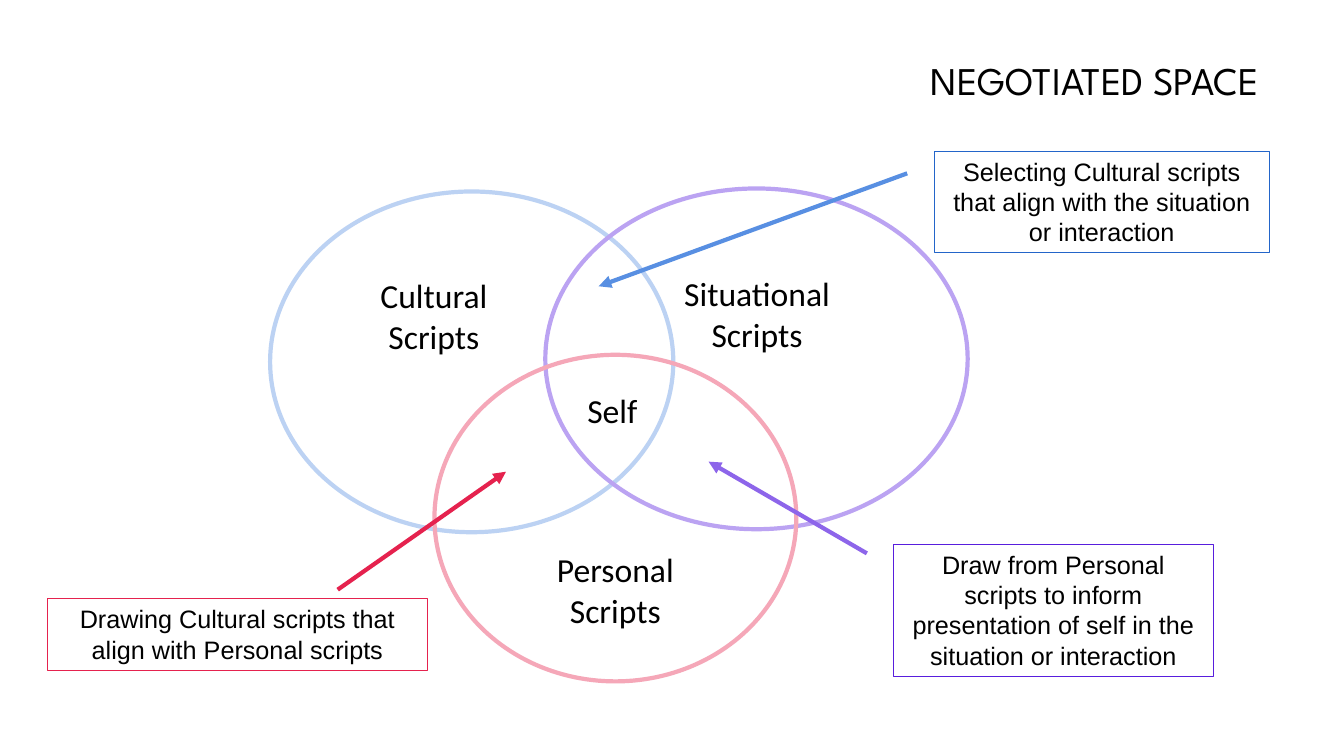
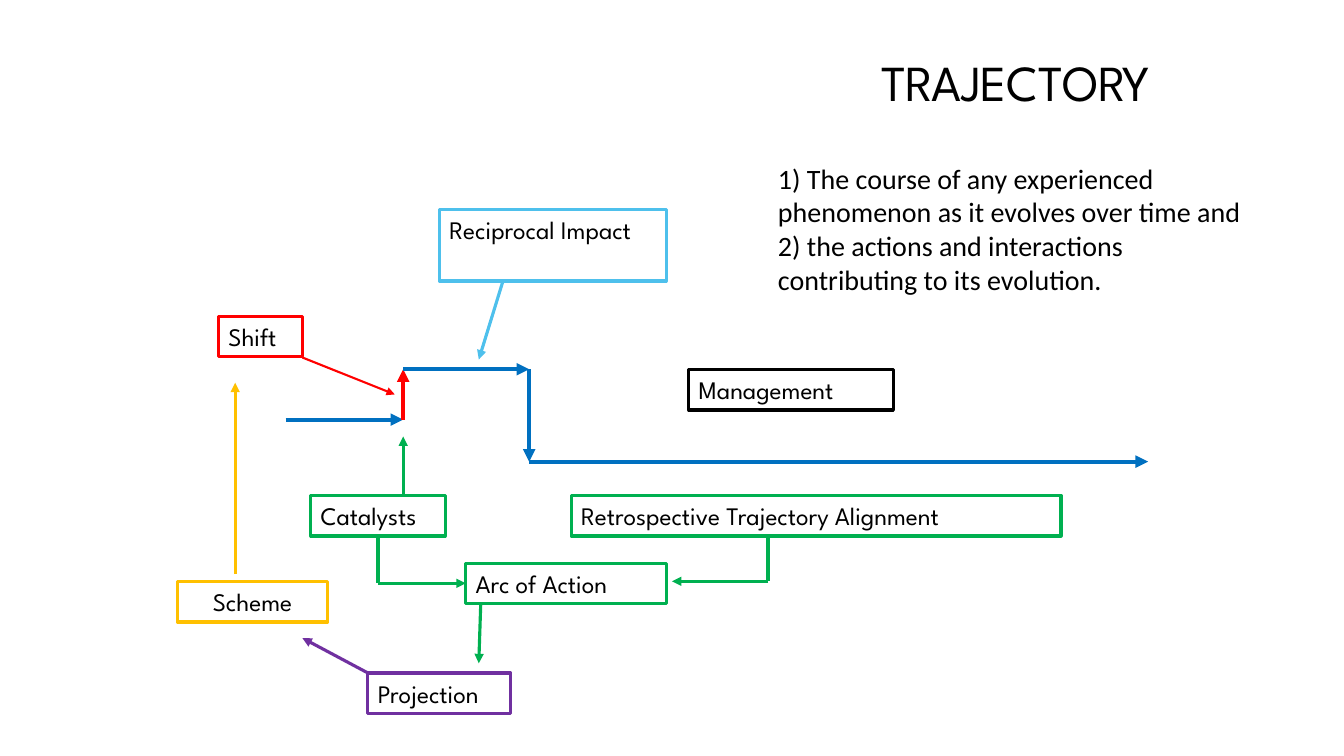
from itertools import pairwise
from pptx import Presentation
from pptx.dml.color import RGBColor
from pptx.enum.shapes import MSO_CONNECTOR as Connector, MSO_SHAPE as Shape
from pptx.enum.text import MSO_ANCHOR as Anchor, PP_ALIGN as Align
from pptx.oxml.xmlchemy import OxmlElement
from pptx.util import Inches, Pt

# Slide grid: 160 columns by 90 rows, twelve to the inch
COLUMNS, ROWS = 160, 90
CELL = Inches(1) / 12

HEADING_FONT, LABEL_FONT, CALLOUT_FONT = "League Spartan", "Calibri", "Arial"
BLACK, BLUE, RED, GREEN = "000000", "0070C0", "FF0000", "00B050"
SKY, AMBER, PURPLE = "4EC0EC", "FFC000", "7030A0"
CRIMSON, VIOLET, AZURE = "E5224E", "8D65EA", "588FE2"


def color(value):
    return RGBColor.from_string(value)


def cells(*counts):
    return [round(count * CELL) for count in counts]


def shifted(origin, left, top, *size):
    return (origin[0] + left, origin[1] + top, *size)


def write(shape, text, font=LABEL_FONT, size=24, align=Align.CENTER,
          anchor=Anchor.TOP, spacing=1.0):
    frame = shape.text_frame
    frame.word_wrap = True
    frame.vertical_anchor = anchor
    paragraph = frame.paragraphs[0]
    paragraph.alignment = align
    paragraph.line_spacing = spacing
    run = paragraph.add_run()
    run.text = text
    run.font.name = font
    run.font.size = Pt(size)
    run.font.color.rgb = color(BLACK)


def add_text(slide, box, text, **style):
    write(slide.shapes.add_textbox(*cells(*box)), text, **style)


def add_outline(slide, kind, box, line, width):
    shape = slide.shapes.add_shape(kind, *cells(*box))
    shape.shadow.inherit = False
    shape.fill.background()
    shape.line.color.rgb = color(line)
    shape.line.width = Pt(width)
    return shape


def add_line(slide, start, end, line, width, arrow=True):
    connector = slide.shapes.add_connector(
        Connector.STRAIGHT, *cells(*start), *cells(*end))
    connector.line.color.rgb = color(line)
    connector.line.width = Pt(width)
    if arrow:
        head = OxmlElement("a:tailEnd")
        head.set("type", "triangle")
        connector.line._get_or_add_ln().append(head)
    connector._element.spPr.append(OxmlElement("a:effectLst"))


def add_route(slide, origin, points, line, width):
    """Joined lines with an arrowhead on the last one."""
    legs = list(pairwise(shifted(origin, *point) for point in points))
    for number, (start, end) in enumerate(legs, 1):
        add_line(slide, start, end, line, width, arrow=number == len(legs))


def add_title(slide, box, text, size):
    add_text(slide, box, text, font=HEADING_FONT, size=size,
             align=Align.RIGHT, anchor=Anchor.MIDDLE, spacing=0.9)


def add_venn(slide, origin):
    circles = [
        ((0, 0.36, 48, 40.56), "BCD2F3"),
        ((32.76, 0, 50.28, 40.56), "BBA3F2"),
        ((19.56, 19.8, 43.08, 38.88), "F5A7B8"),
    ]
    for box, line in circles:
        add_outline(slide, Shape.OVAL, shifted(origin, *box), line, 3)
    labels = [
        ("Cultural Scripts", (7.08, 9.72, 24.84, 10.92)),
        ("Situational Scripts", (44.88, 9.48, 26.16, 10.92)),
        ("Personal Scripts", (28.08, 42.36, 26.04, 10.92)),
        ("Self", (35.04, 23.4, 11.4, 6)),
    ]
    for text, box in labels:
        add_text(slide, shifted(origin, *box), text)


def add_callout(slide, box, text, border, arrow_color, start, end):
    """Bordered note; its arrow is given relative to the note's corner."""
    add_line(slide, shifted(box, *start), shifted(box, *end), arrow_color, 3)
    note = add_outline(slide, Shape.RECTANGLE, box, border, 0.75)
    write(note, text, font=CALLOUT_FONT, size=18)


def add_trajectory(slide, origin):
    # Stepped course of the trajectory
    steps = [(13, 25), (27, 25), (27, 19), (42, 19), (42, 30), (115.68, 30)]
    for start, end in pairwise(steps):
        is_shift = start[0] == end[0] and end[1] < start[1]
        add_route(slide, origin, [start, end], RED if is_shift else BLUE, 3)

    # Concept boxes: text, left, top, width, height, colour
    row = 4.85
    concepts = [
        ("Catalysts", 16, 34, 16, row, GREEN),
        ("Shift", 5, 12.68, 10, row, RED),
        ("Projection", 22.8, 55.16, 17, row, PURPLE),
        ("Arc of Action", 34.44, 42.08, 23.88, row, GREEN),
        ("Reciprocal Impact", 31.32, 0, 27, 8.5, SKY),
        ("Scheme", 0.12, 44.24, 17.88, row, AMBER),
        ("Management", 61, 19, 24.36, row, BLACK),
        ("Retrospective Trajectory Alignment", 47, 34, 58.32, row, GREEN),
    ]
    for text, *box, line in concepts:
        shape = add_outline(slide, Shape.RECTANGLE, shifted(origin, *box),
                            line, 2.25)
        write(shape, text, font=HEADING_FONT, size=18,
              align=Align.CENTER if text == "Scheme" else Align.LEFT)

    # Links between the concepts and the course
    links = [
        ([(27, 34), (27, 27)], GREEN, 2.25),
        ([(15, 17.6), (26, 22)], RED, 1.5),
        ([(36.24, 46.76), (36, 54)], GREEN, 2.25),
        ([(24, 38.84), (24, 44.48), (34.44, 44.48)], GREEN, 2.25),
        ([(38.88, 8.5), (36, 17.84)], SKY, 2.25),
        ([(22.8, 55.16), (15, 51)], PURPLE, 2.25),
        ([(7, 43.4), (7, 20.6)], AMBER, 2.25),
        ([(70.44, 38.84), (70.44, 44.24), (59, 44.24)], GREEN, 2.25),
    ]
    for points, line, width in links:
        add_route(slide, origin, points, line, width)


def build_negotiated_space(slide):
    add_title(slide, (97.68, 3.6, 53.4, 12.6), "NEGOTIATED SPACE", 28)
    add_venn(slide, (32.16, 22.44))
    add_callout(slide, (5.64, 71.28, 45.24, 8.52),
                "Drawing Cultural scripts that align with Personal scripts",
                CRIMSON, CRIMSON, (34.56, -1.08), (54.6, -15.12))
    add_callout(slide, (106.32, 64.8, 38.16, 15.72),
                "Draw from Personal scripts to inform presentation of self "
                "in the situation or interaction",
                "581EDD", VIOLET, (-3.12, 1.08), (-21.96, -9.84))
    add_callout(slide, (111.24, 18, 39.84, 12.12),
                "Selecting Cultural scripts that align with the situation "
                "or interaction",
                "2365C9", AZURE, (-3.24, 2.64), (-39.96, 16.08))


def build_trajectory(slide):
    add_title(slide, (87.12, 5.04, 51, 10.2), "TRAJECTORY", 36)
    add_text(slide, (91.44, 18.6, 59.52, 17.4),
             "1) The course of any experienced phenomenon as it evolves over "
             "time and 2) the actions and interactions contributing to its "
             "evolution.", size=20, align=Align.LEFT)
    add_trajectory(slide, (21, 24.96))


def main():
    presentation = Presentation()
    presentation.slide_width, presentation.slide_height = cells(COLUMNS, ROWS)
    blank = presentation.slide_layouts[6]
    for build in (build_negotiated_space, build_trajectory):
        build(presentation.slides.add_slide(blank))
    presentation.save("out.pptx")


if __name__ == "__main__":
    main()
